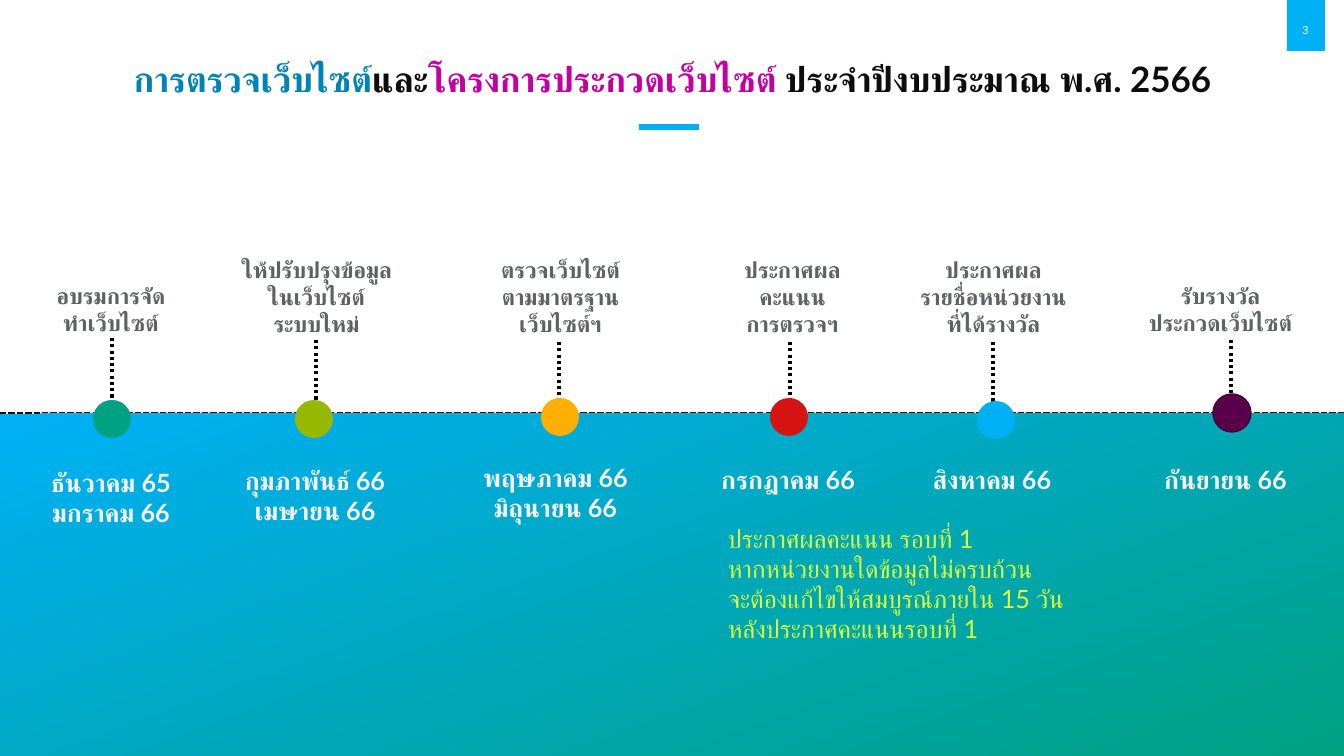
from dataclasses import dataclass

from lxml import etree
from pptx import Presentation
from pptx.dml.color import RGBColor
from pptx.enum.dml import MSO_LINE
from pptx.enum.shapes import MSO_CONNECTOR, MSO_SHAPE
from pptx.enum.text import MSO_ANCHOR, MSO_AUTO_SIZE, PP_ALIGN
from pptx.oxml.ns import qn
from pptx.util import Emu, Pt

RECT, OVAL = MSO_SHAPE.RECTANGLE, MSO_SHAPE.OVAL
STRAIGHT = MSO_CONNECTOR.STRAIGHT
DOTS, DASHES = MSO_LINE.ROUND_DOT, MSO_LINE.SQUARE_DOT
CENTER, LEFT = PP_ALIGN.CENTER, PP_ALIGN.LEFT
MIDDLE, TOP = MSO_ANCHOR.MIDDLE, MSO_ANCHOR.TOP
FIT_SHAPE, NO_FIT = MSO_AUTO_SIZE.SHAPE_TO_FIT_TEXT, MSO_AUTO_SIZE.NONE

SLIDE_W, SLIDE_H = 1344, 756
EMU_PER_PX = 914400 / 100.8


@dataclass(frozen=True)
class Theme:
    font: str = "Lato"
    number_font: str = "Arial"
    title_size: int = 25
    date_size: int = 18
    label_size: int = 16
    number_size: int = 8
    sky: str = "00B0F5"
    green: str = "00A082"
    lime: str = "96B900"
    amber: str = "FFAF00"
    red: str = "D71414"
    plum: str = "5A004B"
    plum_edge: str = "430037"
    title_blue: str = "0084B8"
    title_pink: str = "C300A2"
    ink: str = "0D0D0D"
    black: str = "000000"
    label: str = "5E6165"
    date: str = "F2F2F2"
    note: str = "DAFF3C"
    number: str = "FEFEFE"


T = Theme()


@dataclass(frozen=True)
class Milestone:
    label: tuple
    label_box: tuple  # left, top, width
    stem: tuple       # x, top
    dot: tuple        # left, top
    color: str
    dates: tuple
    date_box: tuple   # left, top, width


MILESTONES = [
    Milestone(("อบรมการจัดทำเว็บไซต์",), (35, 277, 152), (112, 338),
              (93, 400), T.green, ("ธันวาคม 65", "มกราคม 66"), (37, 462, 148)),
    Milestone(("ให้ปรับปรุงข้อมูลในเว็บไซต์\nระบบใหม่",), (228, 251, 177), (316, 340),
              (295, 400), T.lime, ("กุมภาพันธ์ 66", "เมษายน 66"), (231, 460, 168)),
    Milestone(("ตรวจเว็บไซต์", "ตามมาตรฐาน\nเว็บไซต์ฯ"), (472, 251, 177), (559, 342),
              (541, 398), T.amber, ("พฤษภาคม 66", "มิถุนายน 66"), (470, 457, 171)),
    Milestone(("ประกาศผล\nคะแนน\nการตรวจฯ",), (704, 251, 177), (790, 342),
              (770, 398), T.red, ("กรกฎาคม 66",), (706, 459, 164)),
    Milestone(("ประกาศผล\nรายชื่อหน่วยงานที่ได้รางวัล",), (905, 251, 177), (993, 342),
              (977, 401), T.sky, ("สิงหาคม 66",), (917, 459, 150)),
    Milestone(("รับรางวัล", "ประกวดเว็บไซต์"), (1132, 277, 177), (1231, 340),
              (1213, 394), T.plum, ("กันยายน 66",), (1150, 459, 151)),
]
LABEL_BOTTOM, STEM_H, DOT = 342, 76, 38
TITLE_PARTS = [
    ("การตรวจเว็บไซต์", T.title_blue),
    ("และ", T.ink),
    ("โครงการประกวดเว็บไซต์ ", T.title_pink),
    ("ประจำปีงบประมาณ พ.ศ. 2566", T.ink),
]
NOTE = ("ประกาศผลคะแนน รอบที่ 1 \nหากหน่วยงานใดข้อมูลไม่ครบถ้วน\n"
        "จะต้องแก้ไขให้สมบูรณ์ภายใน 15 วัน\nหลังประกาศคะแนนรอบที่ 1")


def px(n):
    return Emu(round(n * EMU_PER_PX))


def box(*lengths):
    return [px(n) for n in lengths]


def rgb(color):
    return RGBColor.from_string(color)


def set_font(font, size, color, bold=False, name=T.font):
    font.name, font.size, font.bold = name, Pt(size), bold
    font.color.rgb = rgb(color)
    # Thai glyphs use the complex-script typeface
    etree.SubElement(font._rPr, qn("a:cs")).set("typeface", name)


def add_block(s, kind, at, color, edge=None):
    sp = s.shapes.add_shape(kind, *box(*at))
    sp.shadow.inherit = False
    sp.fill.solid()
    sp.fill.fore_color.rgb = rgb(color)
    if edge:
        sp.line.color.rgb = rgb(edge)
        sp.line.width = Pt(1)
    else:
        sp.line.fill.background()
    return sp


def add_line(s, start, end, color, width, dash):
    line = s.shapes.add_connector(STRAIGHT, *box(*start, *end))
    line.line.color.rgb = rgb(color)
    line.line.width = Pt(width)
    line.line.dash_style = dash
    etree.SubElement(line._element.spPr, qn("a:effectLst"))


def add_text(s, at, paragraphs, size, color, bold=False, name=T.font,
             align=CENTER, anchor=TOP, wrap=False, fit=FIT_SHAPE):
    tf = s.shapes.add_textbox(*box(*at)).text_frame
    tf.word_wrap, tf.auto_size, tf.vertical_anchor = wrap, fit, anchor
    for i, text in enumerate(paragraphs):
        p = tf.add_paragraph() if i else tf.paragraphs[0]
        p.text, p.alignment = text, align
        set_font(p.font, size, color, bold, name)


def add_title(s):
    title = s.shapes.title
    title.left, title.top, title.width, title.height = box(93, 54, 1159, 55)
    tf = title.text_frame
    tf.word_wrap, tf.auto_size, tf.vertical_anchor = True, NO_FIT, MIDDLE
    p = tf.paragraphs[0]
    p.alignment, p.line_spacing = CENTER, 0.9
    for text, color in TITLE_PARTS:
        r = p.add_run()
        r.text = text
        set_font(r.font, T.title_size, color, True)


def add_ground(s):
    sp = add_block(s, RECT, (0, 414, SLIDE_W, SLIDE_H - 414), T.sky)
    sp.fill.gradient()
    sp.fill.gradient_angle = 290
    for stop, color in zip(sp.fill.gradient_stops, (T.sky, T.green)):
        stop.color.rgb = rgb(color)


def add_milestone(s, m):
    left, top, width = m.label_box
    add_text(s, (left, top, width, LABEL_BOTTOM - top), m.label, T.label_size,
             T.label, True, anchor=MIDDLE, wrap=True)
    edge = T.plum_edge if m.color == T.plum else None
    add_block(s, OVAL, (*m.dot, DOT, DOT), m.color, edge)
    add_text(s, (*m.date_box, 10 + 30 * len(m.dates)), m.dates, T.date_size,
             T.date, True)


def main():
    prs = Presentation()
    prs.slide_width, prs.slide_height = box(SLIDE_W, SLIDE_H)
    s = prs.slides.add_slide(prs.slide_layouts[5])

    # Page number tab
    add_block(s, RECT, (1287, -3, 38, 54), T.sky)
    add_text(s, (1282, 19, 47, 21), ["3"], T.number_size, T.number,
             name=T.number_font, anchor=MIDDLE, wrap=True, fit=NO_FIT)

    # Heading
    add_title(s)
    add_block(s, RECT, (639, 124, 60, 6), T.sky)

    # Stems and time axis, partly behind the ground
    for m in MILESTONES:
        x, top = m.stem
        add_line(s, (x, top), (x, top + STEM_H), T.black, 2.25, DOTS)
    add_line(s, (0, 413), (SLIDE_W, 413), T.ink, 1.5, DASHES)
    add_ground(s)

    # Milestones and note
    for m in MILESTONES:
        add_milestone(s, m)
    add_text(s, (718, 518, 381, 132), [NOTE], T.date_size, T.note, align=LEFT)

    prs.save("out.pptx")


if __name__ == "__main__":
    main()
